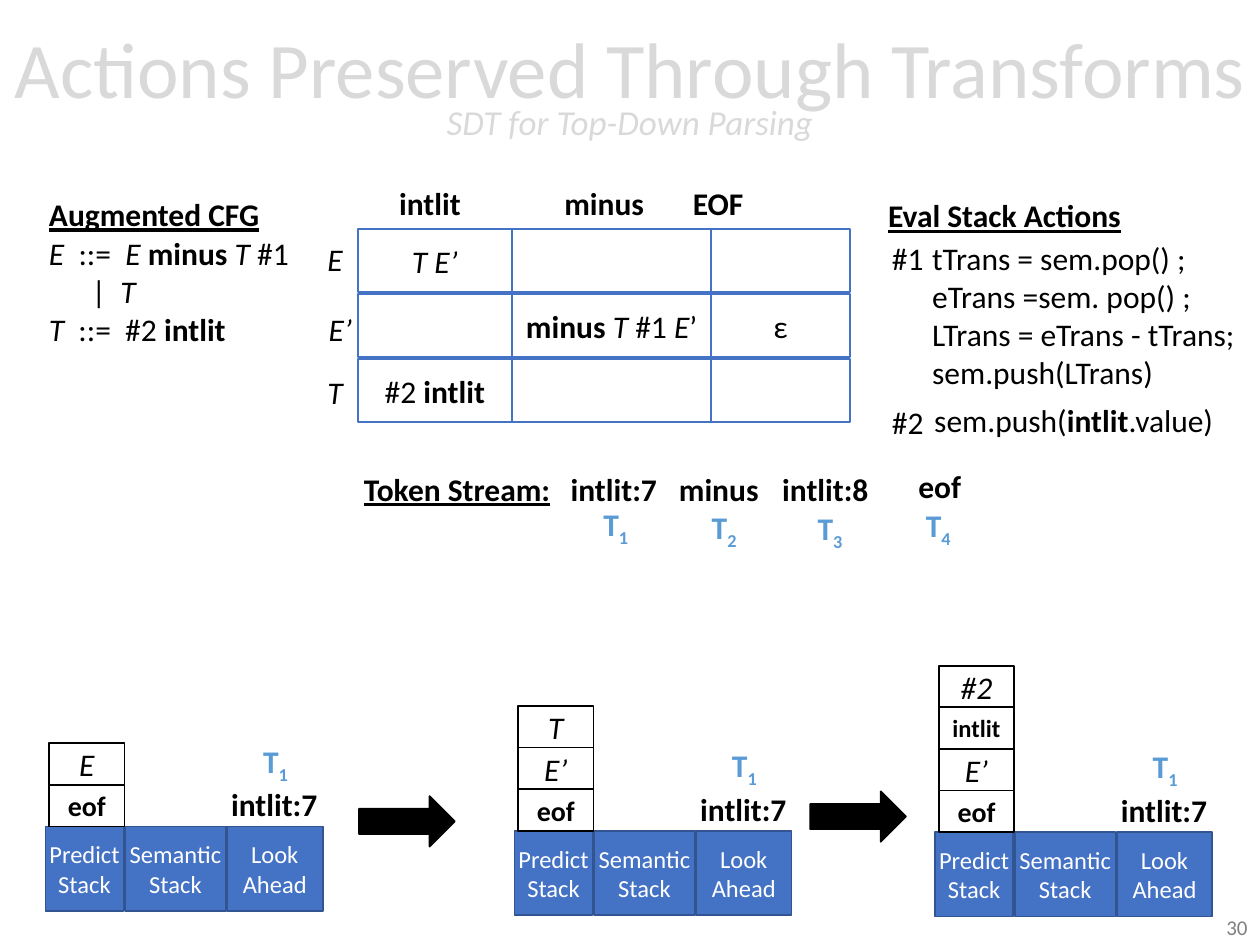
from itertools import accumulate

from pptx import Presentation
from pptx.dml.color import RGBColor
from pptx.enum.shapes import MSO_SHAPE as Shape
from pptx.enum.text import MSO_ANCHOR as Anchor, MSO_AUTO_SIZE as AutoSize, PP_ALIGN as Align
from pptx.util import Pt

BLACK = RGBColor(0, 0, 0)
WHITE = RGBColor(255, 255, 255)
BLUE = RGBColor(0x44, 0x72, 0xC4)
DARK_BLUE = RGBColor(0x32, 0x54, 0x91)
SKY = RGBColor(0x5B, 0x9B, 0xD5)
TITLE_GRAY = RGBColor(0xD9, 0xD9, 0xD9)
NUMBER_GRAY = RGBColor(0x80, 0x80, 0x80)

# Content: a paragraph is a list of (text, style) runs;
# styles are b bold, i italic, u underlined, s subscript
TITLE, SUBTITLE = "Actions Preserved Through Transforms", "SDT for Top-Down Parsing"
PAGE_NUMBER = "30"

GRAMMAR = [
    [("E  ", "i"), ("::=  ", ""), ("E ", "i"), ("minus", "b"), (" T ", "i"), ("#1", "")],
    [("|  ", ""), ("T", "i")],
    [("T", "i"), ("  ::=  #2 ", ""), ("intlit", "b")],
]
ACTION_1 = ["tTrans = sem.pop() ;", "eTrans =sem. pop() ;",
            "LTrans = eTrans - tTrans;", "sem.push(LTrans)"]
ACTION_2 = [("sem.push(", ""), ("intlit", "b"), (".value)", "")]

# Parse table: (name, left, width) and (name, left, top, width)
COLUMN_HEADS = [("intlit", 221, 49.7), ("minus", 315.4, 60.5), ("EOF", 388.8, 43.9)]
ROW_HEADS = [("E", 180, 133.9, 23), ("E’", 180.7, 173.5, 28.1), ("T", 180, 209.5, 23)]
RULES = [
    [[("T E’", "i")], [], []],
    [[], [("minus ", "b"), ("T", "i"), (" #1 ", ""), ("E", "i"), ("’", "")], [("ε", "")]],
    [[("#2 ", ""), ("intlit", "b")], [], []],
]
TABLE_LEFT, TABLE_TOP, ROW_STEP, ROW_HEIGHT = 204.5, 131, 37.1, 36
COLUMN_WIDTHS = [88, 114, 79.2]

# Tokens: (name, left, top, width, label left, label top)
TOKENS = [
    ("intlit:7", 319, 265, 64.1, 337.7, 285.1),
    ("minus", 380.9, 265, 60.5, 399.6, 286.6),
    ("intlit:8", 439.9, 265, 64.1, 460.1, 287.3),
    ("eof", 517.7, 263.5, 38.9, 522, 285.8),
]

# Parser states: (left, top of the base, stack from bottom to top)
STATES = [
    (26, 472.3, [("eof", "b", 16), ("E", "i", 18)]),
    (294, 474.8, [("eof", "b", 16), ("E’", "i", 18), ("T", "i", 18)]),
    (534.4, 475.6, [("eof", "b", 16), ("E’", "i", 18), ("intlit", "b", 14), ("#2", "i", 18)]),
]
# Base boxes: (words, offset from the state's left, width)
BASES = [(("Predict", "Stack"), 0, 44.6), (("Semantic", "Stack"), 45.5, 57.6),
         (("Look", "Ahead"), 103.7, 54.7)]
BASE_HEIGHT, CELL_WIDTH, CELL_HEIGHT = 48.2, 43.2, 23.8
ARROWS = [(205.2, 455), (463, 452.2)]

prs = Presentation()
prs.slide_width, prs.slide_height = Pt(720), Pt(540)
slide = prs.slides.add_slide(prs.slide_layouts[6])


def write(frame, paragraphs, size=18, color=BLACK, align=Align.LEFT):
    for index, runs in enumerate(paragraphs):
        para = frame.add_paragraph() if index else frame.paragraphs[0]
        para.alignment = align
        font = para.font
        font.name, font.size, font.color.rgb = "Calibri", Pt(size), color
        for text, style in runs:
            run = para.add_run()
            run.text = text
            run.font.bold = "b" in style
            run.font.italic = "i" in style
            run.font.underline = "u" in style
            if "s" in style:
                run.font._element.set("baseline", "-25000")


def add_text(left, top, width, paragraphs, height=28.8, **look):
    frame = slide.shapes.add_textbox(Pt(left), Pt(top), Pt(width), Pt(height)).text_frame
    frame.word_wrap = False
    frame.auto_size = AutoSize.SHAPE_TO_FIT_TEXT
    write(frame, paragraphs, **look)
    return frame


def add_box(left, top, width, height, fill, line, paragraphs=(), kind=Shape.RECTANGLE, **look):
    box = slide.shapes.add_shape(kind, Pt(left), Pt(top), Pt(width), Pt(height))
    box.shadow.inherit = False
    box.fill.solid()
    box.fill.fore_color.rgb = fill
    box.line.color.rgb, box.line.width = line, Pt(1)
    frame = box.text_frame
    frame.word_wrap, frame.vertical_anchor = True, Anchor.MIDDLE
    frame.margin_left = frame.margin_right = frame.margin_top = frame.margin_bottom = 0
    write(frame, paragraphs, align=Align.CENTER, **look)


def add_token_label(left, top, number):
    add_text(left, top, 29.5, [[("T", "b"), (str(number), "bs")]], color=SKY)


# Title and page number
title = slide.shapes.add_textbox(Pt(0), Pt(1.4), Pt(720), Pt(104.4)).text_frame
title.word_wrap, title.vertical_anchor = True, Anchor.MIDDLE
title.margin_left = title.margin_right = 0
write(title, [[(TITLE, "")]], size=45, color=TITLE_GRAY, align=Align.CENTER)
heading = title.paragraphs[0]
heading.line_spacing = 0.7
heading.add_line_break()
subtitle = heading.add_run()
subtitle.text = SUBTITLE
subtitle.font.size, subtitle.font.italic = Pt(20), True

number = slide.shapes.add_textbox(Pt(558), Pt(519), Pt(162), Pt(20.2)).text_frame
number.word_wrap = True
write(number, [[(PAGE_NUMBER, "")]], size=12, color=NUMBER_GRAY, align=Align.RIGHT)

# Augmented grammar
add_text(20.9, 108, 135.4, [[("Augmented CFG", "bu")]])
grammar = add_text(20.9, 130.3, 152.6, GRAMMAR, height=72.7)
alternative = grammar.paragraphs[1]._p.get_or_add_pPr()
alternative.set("marL", str(Pt(24.4)))

# Parse table
column_lefts = accumulate(COLUMN_WIDTHS[:-1], initial=TABLE_LEFT)
for column, (left, width) in enumerate(zip(column_lefts, COLUMN_WIDTHS)):
    for row, rules in enumerate(RULES):
        rule = rules[column]
        add_box(left, TABLE_TOP + row * ROW_STEP, width, ROW_HEIGHT, WHITE, BLUE,
                [rule] if rule else [])
for name, left, width in COLUMN_HEADS:
    add_text(left, 101.5, width, [[(name, "b")]])
for name, left, top, width in ROW_HEADS:
    add_text(left, top, width, [[(name, "i")]])

# Evaluation actions
add_text(500.4, 108.7, 149, [[("Eval Stack Actions", "bu")]])
add_text(502.6, 133.2, 33.1, [[("#1", "")]])
add_text(525.6, 133.2, 189.4, [[(line, "")] for line in ACTION_1], height=94.3)
add_text(502.6, 226.8, 33.1, [[("#2", "")]])
add_text(526.8, 225.4, 179.5, [ACTION_2])

# Token stream
add_text(200.9, 265, 121.7, [[("Token Stream:", "bu")]])
for index, (name, left, top, width, label_left, label_top) in enumerate(TOKENS, 1):
    add_text(left, top, width, [[(name, "b")]])
    add_token_label(label_left, label_top, index)

# Parser states
for left, base_top, stack in STATES:
    for words, offset, width in BASES:
        add_box(left + offset, base_top, width, BASE_HEIGHT, BLUE, DARK_BLUE,
                [[(word, "")] for word in words], size=14, color=WHITE)
    for level, (symbol, style, size) in enumerate(stack, 1):
        add_box(left + 2, base_top - level * CELL_HEIGHT, CELL_WIDTH, CELL_HEIGHT,
                WHITE, BLACK, [[(symbol, style)]], size=size)
    add_text(left + 98, base_top - 27, 65.5, [[("intlit:7", "b")]], align=Align.CENTER)
    add_token_label(left + 117.2, base_top - 52, 1)

# Arrows between states
for left, top in ARROWS:
    add_box(left, top, 54.7, 28.8, BLACK, BLACK, kind=Shape.RIGHT_ARROW)

prs.save("out.pptx")
